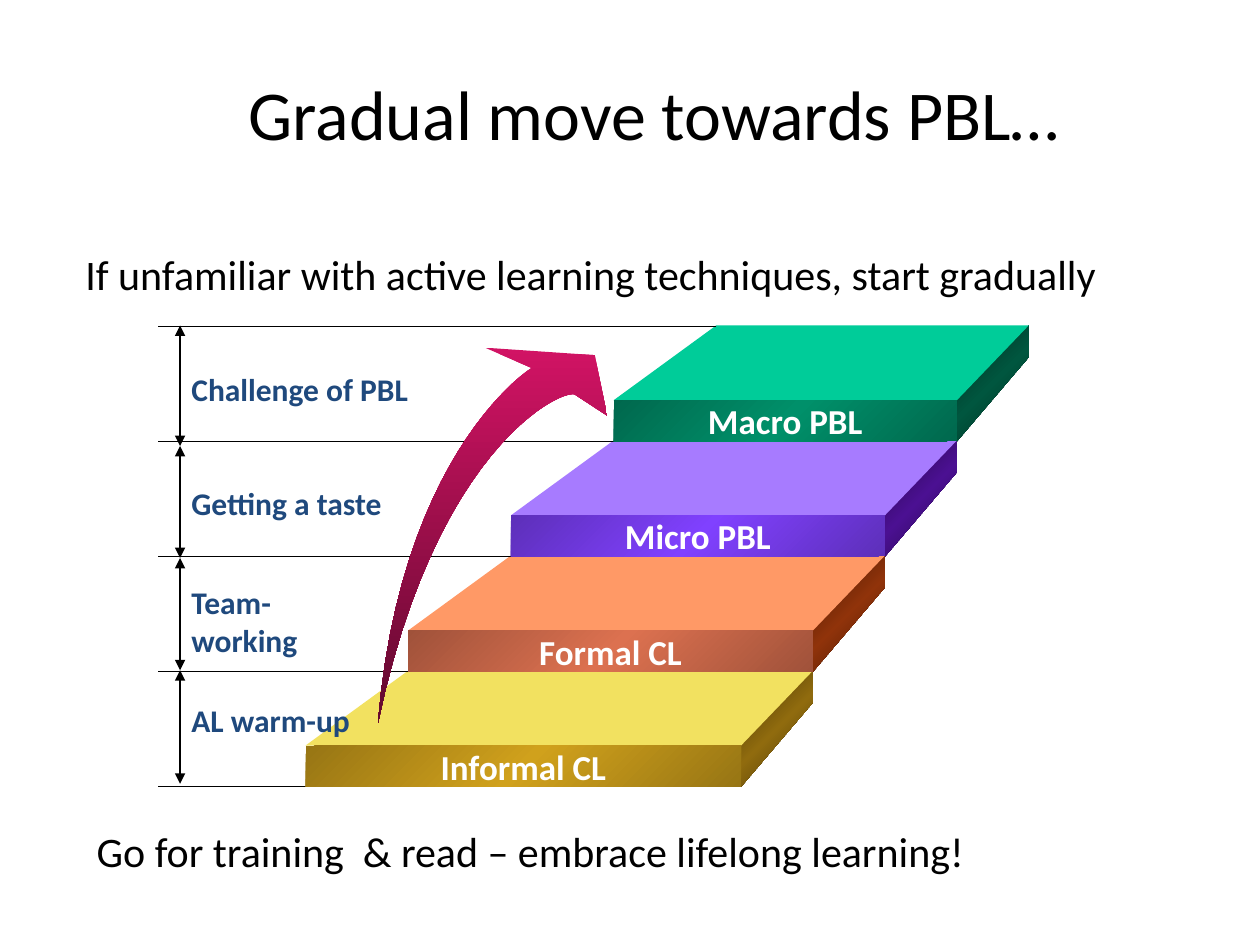
from collections import namedtuple

from lxml import etree
from pptx import Presentation
from pptx.dml.color import RGBColor
from pptx.enum.shapes import MSO_CONNECTOR, MSO_SHAPE
from pptx.enum.text import MSO_ANCHOR, PP_ALIGN
from pptx.oxml.ns import qn
from pptx.util import Cm, Pt

STRAIGHT = MSO_CONNECTOR.STRAIGHT
RECTANGLE = MSO_SHAPE.RECTANGLE
MIDDLE, TOP = MSO_ANCHOR.MIDDLE, MSO_ANCHOR.TOP
LEFT, CENTER = PP_ALIGN.LEFT, PP_ALIGN.CENTER

Box = namedtuple("Box", "left top width height")
Step = namedtuple("Step", "text tread side front")

FONT = "Calibri"
BLACK, WHITE, NAVY = "000000", "FFFFFF", "1F497D"
RISE, LEFT_SHIFT, RIGHT_SHIFT = 2.32, 2.07, 1.45
TREAD_DEPTH, FACE_HEIGHT, SIDE_HEIGHT = 1.51, 0.83, 0.64

STEPS = [
    Step("Macro PBL", "00CC99", ("00281D", "00563F"), ("00684D", "00906A")),
    Step("Micro PBL", "A77BFF", ("230744", "4B1092"), ("5D2FB9", "8041FF")),
    Step("Formal CL", "FF9966", ("431805", "90330A"), ("A0523A", "DC7150")),
    Step("Informal CL", "F2E160", ("433206", "906B0E"), ("977514", "D0A11C")),
]
LABELS = [
    (["Challenge of PBL"], 0.78, 1.02),
    (["Getting a taste"], 3.07, 1.02),
    (["Team-", "working"], 5.07, 1.78),
    (["AL warm-up"], 7.44, 1.02),
]
SPAN_ENDS = [0, 2.43, 4.69, 6.95, 9.24]


def color(value):
    """Turn a hex string into a colour."""
    return RGBColor.from_string(value)


def write(frame, lines, size, ink=BLACK, bold=False, align=LEFT, anchor=TOP, wrap=True):
    """Fill a text frame with one paragraph for each line."""
    frame.word_wrap = wrap
    frame.vertical_anchor = anchor
    for number, line in enumerate(lines):
        para = frame.add_paragraph() if number else frame.paragraphs[0]
        para.alignment = align
        span = para.add_run()
        span.text = line
        span.font.name, span.font.size, span.font.bold = FONT, Pt(size), bold
        span.font.color.rgb = color(ink)


def add_text(page, box, lines, size, **style):
    """Place a text box."""
    frame = page.shapes.add_textbox(*map(Cm, box)).text_frame
    write(frame, lines, size, **style)


def paint(shape, fills, angle=45):
    """Give a shape a plain or gradient fill without outline or shadow."""
    shape.shadow.inherit = False
    shape.line.fill.background()
    if len(fills) == 1:
        shape.fill.solid()
        shape.fill.fore_color.rgb = color(fills[0])
        return
    shape.fill.gradient()
    shape.fill.gradient_angle = 360 - angle
    stops = next(shape._element.spPr.iter(qn("a:gsLst")))
    for stop in list(stops):
        stops.remove(stop)
    for number, value in enumerate(fills):
        position = 100000 * number // (len(fills) - 1)
        stop = etree.SubElement(stops, qn("a:gs"), pos=str(position))
        etree.SubElement(stop, qn("a:srgbClr"), val=value)


def add_outline(page, box, points, fills, angle=45):
    """Draw a closed outline whose points are relative to the box."""
    corners = [(Cm(box.left + x), Cm(box.top + y)) for x, y in points]
    builder = page.shapes.build_freeform(*corners[0])
    builder.add_line_segments(corners[1:], close=True)
    paint(builder.convert_to_shape(), fills, angle)


def add_line(page, start, end, arrows=False):
    """Draw a thin black line, with arrowheads at both ends if wanted."""
    line = page.shapes.add_connector(STRAIGHT, *map(Cm, start + end))
    line.line.width = Pt(0.75)
    line.line.color.rgb = color(BLACK)
    properties = line._element.spPr
    if arrows:
        for tag in ("a:headEnd", "a:tailEnd"):
            etree.SubElement(properties.find(qn("a:ln")), qn(tag), type="triangle")
    etree.SubElement(properties, qn("a:effectLst"))


def curve(start, first, second, end, count=24):
    """Return points along a cubic curve."""
    points = []
    for number in range(count + 1):
        t = number / count
        weights = ((1 - t) ** 3, 3 * t * (1 - t) ** 2, 3 * t * t * (1 - t), t ** 3)
        points.append(tuple(
            sum(weight * value for weight, value in zip(weights, axis))
            for axis in zip(start, first, second, end)))
    return points


def step_box(box, number):
    """Return the front block of a step, from its tread's back to its foot."""
    left = box.left + 9.19 - LEFT_SHIFT * number
    right = box.left + 16.11 - RIGHT_SHIFT * number
    return Box(left, box.top + RISE * number, right - left, TREAD_DEPTH + FACE_HEIGHT)


def add_step_top(page, box, step):
    """Draw the side and the tread of one step."""
    back = box.width + RIGHT_SHIFT
    side = [(back, SIDE_HEIGHT), (box.width, box.height), (box.width, TREAD_DEPTH), (back, 0)]
    tread = [(box.width, TREAD_DEPTH), (0, TREAD_DEPTH), (LEFT_SHIFT, 0), (back, 0)]
    dark, light = step.side
    add_outline(page, box, side, (dark, light, dark))
    add_outline(page, box, tread, (step.tread,))


def add_step_front(page, box, step):
    """Draw the named front face of one step."""
    face = Box(box.left, box.top + TREAD_DEPTH, box.width, FACE_HEIGHT)
    front = page.shapes.add_shape(RECTANGLE, *map(Cm, face))
    dark, light = step.front
    paint(front, (dark, light, dark))
    frame = front.text_frame
    frame.margin_top = frame.margin_bottom = 0
    write(frame, [step.text], 20, ink=WHITE, bold=True, align=CENTER,
          anchor=MIDDLE, wrap=False)


def add_scale(page, box):
    """Draw the level lines and the arrows between them."""
    for number in range(len(STEPS) + 1):
        level = box.top + 0.02 + RISE * number
        end = box.left + 9.19 + LEFT_SHIFT * (1 - number)
        add_line(page, (end, level), (box.left, level))
    middle = box.left + 0.45
    for upper, lower in zip(SPAN_ENDS, SPAN_ENDS[1:]):
        add_line(page, (middle, box.top + upper), (middle, box.top + lower), arrows=True)


def add_rising_arrow(page, box):
    """Draw the curved arrow that climbs the stairs."""
    tail = (0, box.height)
    outer = curve(tail, (0.43, 2.36), (2.84, 0.56), (3.1, 0.41))
    head = [(2.16, 0), (4.37, 0.15), (box.width, 1.37)]
    inner = curve((3.96, 0.94), (3.63, 0.86), (1.14, 2.11), tail)
    add_outline(page, box, outer + head + inner[:-1], ("D11364", "61092E"), angle=90)


def add_staircase(page, box):
    """Draw the whole staircase with its scale and labels."""
    blocks = [(step_box(box, number), step) for number, step in enumerate(STEPS)]
    for block, step in blocks:
        add_step_top(page, block, step)
    add_scale(page, box)
    add_rising_arrow(page, Box(box.left + 4.44, box.top + 0.45, 4.62, 7.57))
    for block, step in blocks:
        add_step_front(page, block, step)
    for lines, top, height in LABELS:
        label = Box(box.left + 0.43, box.top + top, 5.77, height)
        add_text(page, label, lines, 18, ink=NAVY, bold=True)


def main():
    """Build the slide and save it."""
    deck = Presentation()
    deck.slide_width, deck.slide_height = Cm(25.4), Cm(19.05)
    page = deck.slides.add_slide(deck.slide_layouts[6])
    add_text(page, Box(3.28, 1.12, 19.81, 2.29), ["Gradual move towards PBL…"], 40,
             align=CENTER, anchor=MIDDLE)
    add_staircase(page, Box(3.18, 6.56, 17.56, 9.3))
    add_text(page, Box(1.47, 4.88, 22.86, 1.3),
             ["If unfamiliar with active learning techniques, start gradually"], 24)
    add_text(page, Box(1.7, 16.51, 22.43, 1.3),
             ["Go for training  & read – embrace lifelong learning!"], 24)
    deck.save("out.pptx")


if __name__ == "__main__":
    main()
